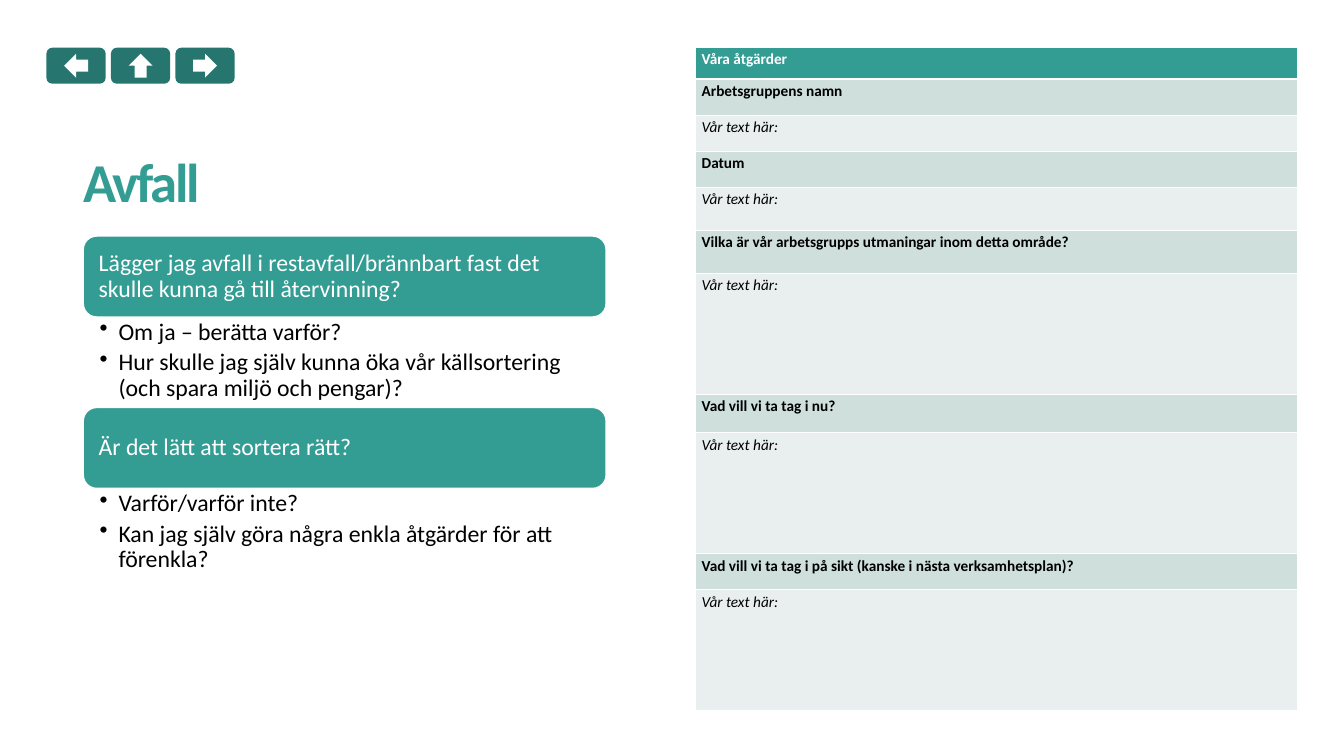
from dataclasses import dataclass
from lxml import etree
from pptx import Presentation
from pptx import util as u
from pptx.dml.color import RGBColor
from pptx.enum import shapes, text
from pptx.oxml import ns

Inches, Pt = u.Inches, u.Pt


@dataclass(frozen=True)
class Theme:
    font: str = "Calibri"
    teal: str = "339D94"
    dark: str = "26766F"
    band: str = "CEDFDC"
    pale: str = "E8EFEE"
    white: str = "FFFFFF"
    black: str = "000000"
    head: float = 64.5
    body: float = 28
    cell: float = 18


T = Theme()
TOP, MID = text.MSO_ANCHOR.TOP, text.MSO_ANCHOR.MIDDLE
BASE = text.MSO_ANCHOR.BOTTOM


def rgb(code):
    return RGBColor.from_string(code)


def sub(parent, tag, **attrs):
    return etree.SubElement(parent, ns.qn(tag), attrs)


def write(frame, *lines, size=T.body, color=T.black, bold=False, italic=False,
          anchor=TOP, pad=(0.1, 0.05, 0.1, 0.05), lead=None, after=0,
          bullet=False, track=None):
    """Fill a text frame with one paragraph per line."""
    frame.word_wrap = True
    frame.auto_size = text.MSO_AUTO_SIZE.NONE
    frame.vertical_anchor = anchor
    (frame.margin_left, frame.margin_top,
     frame.margin_right, frame.margin_bottom) = map(Inches, pad)
    for n, line in enumerate(lines):
        para = frame.add_paragraph() if n else frame.paragraphs[0]
        para.alignment = text.PP_ALIGN.LEFT
        if bullet:
            props = para._p.get_or_add_pPr()
            props.set("marL", str(Inches(0.31)))
            props.set("indent", str(-Inches(0.31)))
            sub(props, "a:buChar", char="•")
        if lead:
            para.line_spacing = lead
        para.space_after = Pt(after)
        run = para.add_run()
        run.text = line
        font = run.font
        font.name, font.size = T.font, Pt(size)
        font.bold, font.italic = bold, italic
        font.color.rgb = rgb(color)
        if track:
            run._r.get_or_add_rPr().set("spc", str(round(track * 100)))


def form(slide, kind, box, fill, line=None, turn=0):
    shape = slide.shapes.add_shape(kind, *map(Inches, box))
    shape.shadow.inherit = False
    shape.fill.solid()
    shape.fill.fore_color.rgb = rgb(fill)
    if line:
        shape.line.color.rgb = rgb(line)
        shape.line.width = Pt(2)
    else:
        shape.line.fill.background()
    shape.rotation = turn
    return shape


# Navigation buttons: back, up, forward
def add_nav(slide, left, top):
    wide, high, side, step = 0.97, 0.59, 0.39, 1.055
    kind = shapes.MSO_SHAPE
    for n, turn in enumerate((180, 270, 0)):
        x = left + n * step
        form(slide, kind.ROUNDED_RECTANGLE, (x, top, wide, high), T.dark)
        form(slide, kind.RIGHT_ARROW,
             (x + (wide - side) / 2, top + (high - side) / 2, side, side),
             T.white, turn=turn)


# Slide title
def add_title(slide, label, box):
    title = slide.shapes.title
    title.left, title.top, title.width, title.height = map(Inches, box)
    write(title.text_frame, label, size=T.head, color=T.teal, bold=True,
          anchor=BASE, pad=(0, 0, 0, 0.08), lead=0.85, track=-2.8)


# Questions, each with its follow-up bullets
def add_asks(slide, asks, box):
    left, top, wide, high = box
    bar, step = 1.33, high / len(asks)
    for n, (ask, points) in enumerate(asks):
        y = top + n * step
        shape = form(slide, shapes.MSO_SHAPE.ROUNDED_RECTANGLE,
                     (left, y, wide, bar), T.teal, T.white)
        write(shape.text_frame, ask, color=T.white, anchor=MID,
              pad=(0.19,) * 4, lead=0.9)
        area = (left, y + bar, wide, step - bar)
        note = slide.shapes.add_textbox(*map(Inches, area))
        write(note.text_frame, *points, pad=(0.27, 0.04, 0.22, 0.04),
              lead=0.9, after=5.6, bullet=True)


def edge(cell, base):
    """Draw white borders; base is the width of the bottom one."""
    props = cell._tc.get_or_add_tcPr()
    for side, width in zip("LRTB", (1, 1, 1, base)):
        line = sub(props, f"a:ln{side}", w=str(Pt(width)))
        sub(sub(line, "a:solidFill"), "a:srgbClr", val=T.white)


# Form table: a heading, then prompts with answer rows
def add_plan(slide, head, asks, reply, box):
    rows = [(head, 0.52, T.teal, T.white, True)]
    for ask, high, room in asks:
        rows += [(ask, high, T.band, T.black, True),
                 (reply, room, T.pale, T.black, False)]
    table = slide.shapes.add_table(len(rows), 1, *map(Inches, box)).table
    for n, (label, high, fill, color, bold) in enumerate(rows):
        table.rows[n].height = Inches(high)
        cell = table.cell(n, 0)
        edge(cell, 1 if n else 3)
        cell.fill.solid()
        cell.fill.fore_color.rgb = rgb(fill)
        write(cell.text_frame, label, size=T.cell, color=color, bold=bold,
              italic=not bold)


ASKS = [
    ("Lägger jag avfall i restavfall/brännbart fast det skulle kunna gå till "
     "återvinning?",
     ["Om ja – berätta varför?",
      "Hur skulle jag själv kunna öka vår källsortering (och spara miljö och "
      "pengar)?"]),
    ("Är det lätt att sortera rätt?",
     ["Varför/varför inte?",
      "Kan jag själv göra några enkla åtgärder för att förenkla?"]),
]
PLAN = [
    ("Arbetsgruppens namn", 0.59, 0.59),
    ("Datum", 0.59, 0.71),
    ("Vilka är vår arbetsgrupps utmaningar inom detta område?", 0.7, 1.98),
    ("Vad vill vi ta tag i nu?", 0.63, 1.98),
    ("Vad vill vi ta tag i på sikt (kanske i nästa verksamhetsplan)?",
     0.59, 1.98),
]


def main():
    deck = Presentation()
    deck.slide_width, deck.slide_height = Inches(21.99), Inches(12.37)
    slide = deck.slides.add_slide(deck.slide_layouts[5])
    add_asks(slide, ASKS, (1.36, 3.86, 8.56, 5.61))
    add_title(slide, "Avfall", (1.36, 1.34, 8.56, 2.23))
    add_nav(slide, 0.76, 0.78)
    add_plan(slide, "Våra åtgärder", PLAN, "Vår text här:",
             (11.38, 0.77, 9.85, 10.85))
    deck.save("out.pptx")


if __name__ == "__main__":
    main()
